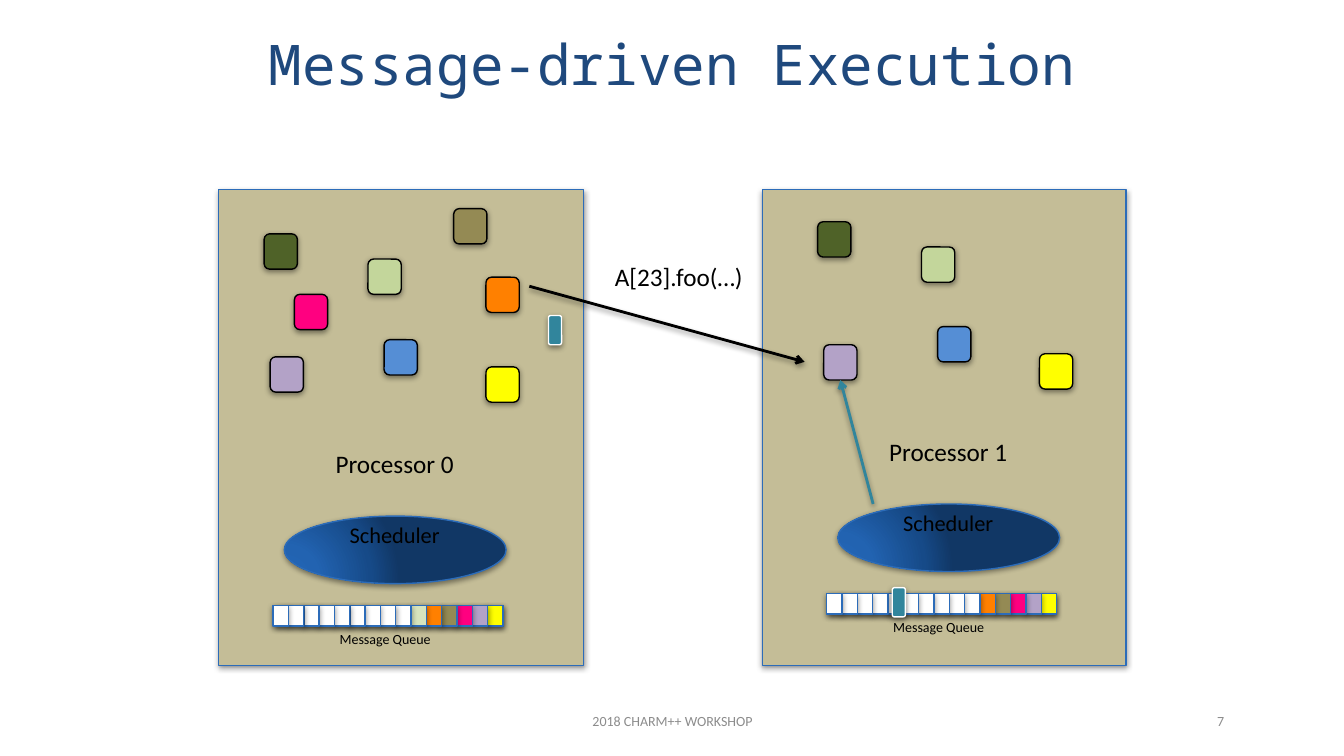
from lxml import etree
from pptx import Presentation
from pptx.dml.color import RGBColor
from pptx.enum.shapes import MSO_CONNECTOR, MSO_SHAPE
from pptx.enum.text import MSO_ANCHOR, MSO_AUTO_SIZE, PP_ALIGN
from pptx.oxml.ns import qn
from pptx.util import Inches, Pt

RECT, ROUND, OVAL = MSO_SHAPE.RECTANGLE, MSO_SHAPE.ROUNDED_RECTANGLE, MSO_SHAPE.OVAL
LINE = MSO_CONNECTOR.STRAIGHT
LEFT, MID, RIGHT = PP_ALIGN.LEFT, PP_ALIGN.CENTER, PP_ALIGN.RIGHT
TOP, CENTER = MSO_ANCHOR.TOP, MSO_ANCHOR.MIDDLE
GROW, FIXED = MSO_AUTO_SIZE.SHAPE_TO_FIT_TEXT, MSO_AUTO_SIZE.NONE
BOTTOM = 2

THEME = {
    "navy": "1F497D", "ink": "000000", "gray": "8C8C8C", "white": "FFFFFF",
    "panel": "C4BD97", "edge": "2C6CB9", "teal": "31859C",
    "moss": "4F6228", "olive": "948A54", "green": "C3D69B", "pale": "D7E4BD",
    "pink": "FF0080", "mauve": "B3A2C7", "blue": "558ED5",
    "orange": "FF8000", "yellow": "FFFF00",
    "glow": [(0, "2367B8"), (30, "2263B1"), (75, "164A88"), (100, "113765")],
    "mono": "Noto Sans Mono", "sans": "Calibri",
    "title": 40, "label": 18, "sched": 16, "small": 10,
}

TITLE = "Message-driven Execution"
FOOTER = "2018 CHARM++ WORKSHOP"
NUMBER = "7"
CALL = "A[23].foo(…)"
CELLS = 15
PROCS = [
    {"name": "Processor 1", "panel": (7.56, 1.88, 3.61, 4.72), "base": (8.17, 4.28),
     "chares": {"moss": (8.11, 2.2), "green": (9.14, 2.45), "mauve": (8.17, 3.42),
                "blue": (9.3, 3.24), "yellow": (10.31, 3.51)},
     "queue": ["orange", "olive", "pink", "mauve", "yellow"]},
    {"name": "Processor 0", "panel": (2.17, 1.88, 3.62, 4.72), "base": (2.68, 4.4),
     "chares": {"moss": (2.62, 2.32), "olive": (4.5, 2.07), "green": (3.65, 2.57),
                "pink": (2.92, 2.92), "mauve": (2.68, 3.54), "blue": (3.81, 3.37),
                "orange": (4.82, 2.75), "yellow": (4.82, 3.64)},
     "queue": ["pale", "orange", "olive", "pink", "mauve", "yellow"]},
]


def color(key):
    return RGBColor.from_string(THEME[key])


def assign(obj, vals):
    for key, val in vals.items():
        setattr(obj, key, val)


def node(root, tag, **vals):
    item = etree.SubElement(root, qn(tag))
    for key, val in vals.items():
        item.set(key, str(val))
    return item


def shade(shape, dist=1.6, alpha=42):
    props = shape._element.spPr
    for old in props.findall(qn("a:effectLst")):
        props.remove(old)
    drop = node(node(props, "a:effectLst"), "a:outerShdw", blurRad=Pt(4),
                dist=Pt(dist), dir=5400000, rotWithShape=0)
    node(node(drop, "a:srgbClr", val=THEME["ink"]), "a:alpha", val=alpha * 1000)


def block(art, kind, box, fill, edge="edge"):
    shape = art.add_shape(kind, *map(Inches, box))
    shape.shadow.inherit = False
    shape.fill.solid()
    shape.fill.fore_color.rgb = color(fill)
    shape.line.color.rgb = color(edge)
    shape.line.width = Pt(1)
    shade(shape)
    return shape


def glow(shape):
    old = shape._element.spPr.find(qn("a:solidFill"))
    grad = etree.Element(qn("a:gradFill"), rotWithShape="1")
    stops = node(grad, "a:gsLst")
    for pos, tint in THEME["glow"]:
        node(node(stops, "a:gs", pos=pos * 1000), "a:srgbClr", val=tint)
    path = node(grad, "a:path", path="circle")
    node(path, "a:fillToRect", l=5000, t=100000, r=120000, b=10000)
    old.getparent().replace(old, grad)


def write(art, text, box, size, tint="ink", face="sans", align=MID, anchor=TOP, auto=GROW):
    frame = art.add_textbox(*map(Inches, box)).text_frame
    assign(frame, {"word_wrap": True, "vertical_anchor": anchor, "auto_size": auto})
    para = frame.paragraphs[0]
    para.alignment = align
    run = para.add_run()
    run.text = text
    assign(run.font, {"size": Pt(THEME[size]), "name": THEME[face]})
    run.font.color.rgb = color(tint)


def arrow(art, start, end, tint, goal=None):
    link = art.add_connector(LINE, *map(Inches, start + end))
    if goal is not None:
        link.end_connect(goal, BOTTOM)
    link.line.color.rgb = color(tint)
    link.line.width = Pt(2)
    node(link.line._get_or_add_ln(), "a:tailEnd", type="arrow")
    shade(link, 2, 40)


def proc(art, data):
    left, top = data["base"]
    block(art, RECT, data["panel"], "panel")
    nodes = {}
    for tint, spot in data["chares"].items():
        nodes[tint] = block(art, ROUND, spot + (0.33, 0.35), tint, "ink")
    write(art, data["name"], (left, top, 2.47, 0.4), "label")
    glow(block(art, OVAL, (left + 0.14, top + 0.72, 2.2, 0.67), "edge"))
    write(art, "Scheduler", (left, top + 0.72, 2.47, 0.37), "sched")
    row = top + 1.61
    block(art, RECT, (left + 0.06, row, 2.25, 0.2), "white")
    step = 2.28 / CELLS
    tints = ["white"] * (CELLS - len(data["queue"])) + data["queue"]
    for col in reversed(range(CELLS)):
        block(art, RECT, (left + 0.03 + col * step, row, step, 0.2), tints[col])
    write(art, "Message Queue", (left - 0.03, row + 0.2, 2.34, 0.27), "small")
    return nodes


def main():
    deck = Presentation()
    assign(deck, {"slide_width": Inches(13.33), "slide_height": Inches(7.5)})
    art = deck.slides.add_slide(deck.slide_layouts[6]).shapes
    write(art, TITLE, (0.44, 0.17, 12.44, 0.92), "title", "navy", "mono",
          anchor=CENTER, auto=FIXED)
    sets = [proc(art.add_group_shape().shapes, data) for data in PROCS]
    block(art, ROUND, (5.44, 3.13, 0.13, 0.29), "teal", "white")
    arrow(art, (5.25, 2.84), (7.98, 3.59), "ink")
    write(art, CALL, (6, 2.54, 1.5, 0.42), "label", align=LEFT)
    arrow(art, (8.66, 5), (8.35, 3.77), "teal", sets[0]["mauve"])
    block(art, ROUND, (8.85, 5.83, 0.13, 0.29), "teal", "white")
    for text, box, align in [(NUMBER, (10.83, 6.95, 1.41, 0.4), RIGHT),
                             (FOOTER, (4.1, 6.95, 5.14, 0.4), MID)]:
        write(art, text, box, "small", "gray", align=align, anchor=CENTER, auto=FIXED)
    deck.save("out.pptx")


if __name__ == "__main__":
    main()
